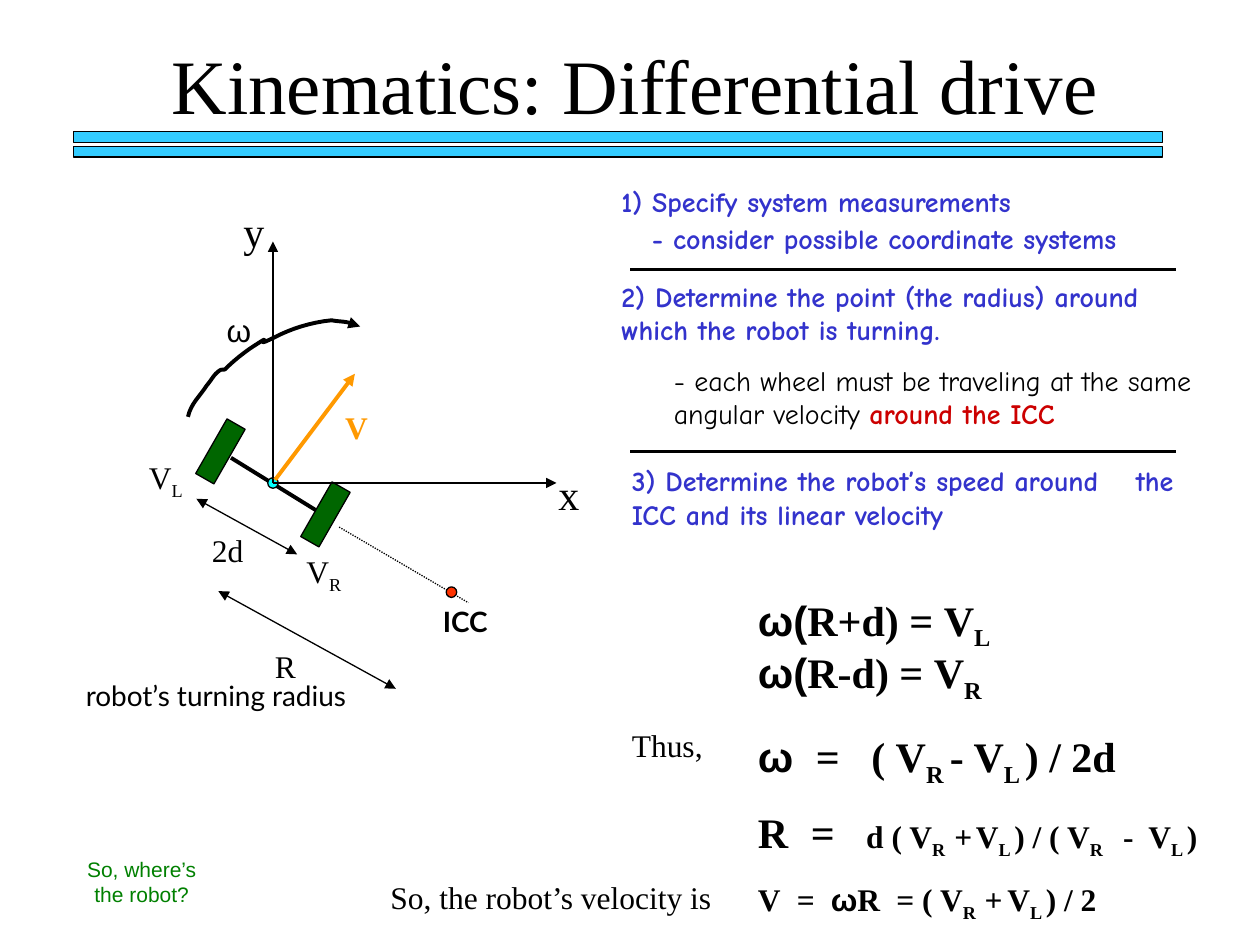
from dataclasses import dataclass, replace
from lxml.etree import SubElement as Sub
from pptx import Presentation
from pptx.dml.color import RGBColor as Rgb
from pptx.enum.dml import MSO_LINE as Dash
from pptx.enum.shapes import MSO_CONNECTOR as Link, MSO_SHAPE as Form
from pptx.enum.text import MSO_ANCHOR as Anchor, MSO_AUTO_SIZE as Fit, PP_ALIGN as Align
from pptx.oxml.ns import qn
from pptx.util import Inches, Pt


@dataclass(frozen=True)
class Style:
    """Look of a run of text."""
    size: int
    face: str
    hue: str = "000000"
    bold: bool = False


class Theme:
    """Colours and type sizes of the slide."""
    black, sky, green = "000000", "33CCFF", "006600"
    cyan, red, gold = "00FFFF", "FF3300", "FF9900"
    thin, rule, thick = 0.75, 1.5, 2.25
    title = Style(44, "Times New Roman")
    label = Style(18, "Times New Roman")
    axis = replace(label, size=24)
    speed = replace(label, hue=gold, bold=True)
    greek = Style(18, "Arial")
    name = Style(16, "Lato")
    note = Style(16, "Comic Neue")
    step = replace(note, hue="3333CC", bold=True)
    stress = replace(note, hue="CC0000", bold=True)
    ask = Style(12, "Arial", "008000")
    math = replace(axis, bold=True)
    small = replace(label, bold=True)
    omega = replace(greek, size=24, bold=True)
    tiny = replace(greek, bold=True)


def cell(count):
    """Turn grid cells, twelve to the inch, into a length."""
    return Inches(count / 12)


def write(para, runs):
    """Add styled runs; every second part between bars is a subscript."""
    for words, style in runs:
        for turn, part in enumerate(words.split("|")):
            if not part:
                continue
            run = para.add_run()
            run.text = part
            font = run.font
            font.size, font.name, font.bold = Pt(style.size), style.face, style.bold
            font.color.rgb = Rgb.from_string(style.hue)
            if turn % 2:
                run._r.get_or_add_rPr().set("baseline", "-25000")


def ink(line, hue, width, ends=()):
    """Set the colour, width and arrowheads of a line."""
    line.color.rgb = Rgb.from_string(hue)
    line.width = Pt(width)
    for end in ends:
        Sub(line._get_or_add_ln(), qn("a:" + end), type="triangle")


@dataclass
class Pane:
    """A box of the slide, in cells, that places parts from its corner."""
    slide: object
    left: float
    top: float
    wide: float

    def spot(self, x, y):
        """Give the slide position of a point in the pane."""
        return cell(self.left + x), cell(self.top + y)

    def text(self, x, y, wide, *runs, rows=1, tabs=(), align=None):
        """Place a text box sized by its type."""
        high = rows * runs[0][1].size * 0.2 + 1.2
        frame = self.slide.shapes.add_textbox(*self.spot(x, y), cell(wide), cell(high)).text_frame
        frame.word_wrap = True
        para = frame.paragraphs[0]
        para.alignment = align
        if tabs:
            stops = Sub(para._p.get_or_add_pPr(), qn("a:tabLst"))
            for stop in tabs:
                Sub(stops, qn("a:tab"), pos=str(Inches(stop)), algn="l")
        write(para, runs)

    def line(self, start, end, width=Theme.thin, hue=Theme.black, ends=(), dash=None):
        """Draw a straight line or arrow."""
        link = self.slide.shapes.add_connector(Link.STRAIGHT, *self.spot(*start), *self.spot(*end))
        Sub(link._element.spPr, qn("a:effectLst"))
        if dash:
            link.line.dash_style = dash
        ink(link.line, hue, width, ends)
        effect = link._element.spPr.find(qn("a:effectLst"))
        link._element.spPr.append(effect)

    def shape(self, form, x, y, wide, high, hue, turn=0):
        """Draw a filled preset shape."""
        item = self.slide.shapes.add_shape(form, *self.spot(x, y), cell(wide), cell(high))
        item.shadow.inherit = False
        item.fill.solid()
        item.fill.fore_color.rgb = Rgb.from_string(hue)
        item.rotation = turn
        ink(item.line, Theme.black, Theme.thin)

    def curve(self, start, arcs, ends):
        """Draw an open path through cubic arcs."""
        points, here = [], start
        for one, two, last in arcs:
            for step in range(1, 9):
                t = step / 8
                mix = ((1 - t) ** 3, 3 * t * (1 - t) ** 2, 3 * t * t * (1 - t), t ** 3)
                knots = (here, one, two, last)
                points.append(self.spot(*(sum(m * k[i] for m, k in zip(mix, knots)) for i in (0, 1))))
            here = last
        pen = self.slide.shapes.build_freeform(*self.spot(*start))
        pen.add_line_segments(points, close=False)
        path = pen.convert_to_shape()
        path.shadow.inherit = False
        path.fill.background()
        ink(path.line, Theme.black, Theme.thick, ends)


def head(pane):
    """Place the title above a double bar."""
    title = pane.slide.shapes.title
    title.left, title.top = pane.spot(4, 0)
    title.width, title.height = cell(99), cell(10)
    frame = title.text_frame
    frame.auto_size, frame.vertical_anchor = Fit.NONE, Anchor.TOP
    frame.paragraphs[0].alignment = Align.CENTER
    write(frame.paragraphs[0], [("Kinematics: Differential drive", Theme.title)])
    for y in (9.55, 10.95):
        pane.shape(Form.RECTANGLE, 0, y, pane.wide, 1, Theme.sky)


def robot(pane):
    """Draw the axes, wheels, measures and motion of the robot."""
    both, tip = ("headEnd", "tailEnd"), ("tailEnd",)
    for x, y in ((23, 29), (13, 23)):
        pane.shape(Form.RECTANGLE, x, y, 2, 6, Theme.green, 29.8)
    pane.line((15, 26.6), (23.1, 31.6), Theme.thick)
    pane.line((25.3, 33.2), (37.6, 40.4), dash=Dash.ROUND_DOT)
    pane.line((11.7, 30.5), (21.3, 35.8), ends=both)
    pane.line((13.8, 39.3), (30.7, 48.6), ends=both)
    for x, y, hue in ((35.5, 38.9, Theme.red), (18.5, 28.5, Theme.cyan)):
        pane.shape(Form.OVAL, x, y, 1, 1, hue)
    for end in ((19, 6), (46, 29)):
        pane.line((19, 29), end, ends=tip)
    pane.line((19.2, 28.7), (26.8, 18.6), Theme.thick, Theme.gold, tip)
    pane.curve((10.9, 22.7), [
        ((11.2, 21.4), (12, 20.8), (12.7, 19.7)),
        ((13, 19.4), (13.4, 18.6), (13.9, 18.3)),
        ((14, 18.2), (14.2, 18.2), (14.4, 18.2)),
        ((15.2, 17.4), (16.2, 16.6), (17.1, 16)),
        ((19.6, 14.4), (16.6, 16.4), (19, 15.2)),
        ((20.7, 14.3), (22.6, 13.7), (24.6, 13.5)),
        ((25, 13.6), (25.6, 13.6), (26.1, 13.7)),
        ((26.6, 13.8), (27, 14.1), (27.3, 14.1))], tip)
    for x, y, wide, words, style in (
            (21, 35, 9, "V|R", Theme.label), (6, 26, 9, "V|L", Theme.label),
            (12, 33, 6, "2d", Theme.label), (18, 44, 6, "R", Theme.label),
            (34, 40, 8, "ICC", replace(Theme.name, bold=True)),
            (0, 47, 35, "robot’s turning radius", Theme.name),
            (13.4, 12, 6, "ω", Theme.greek), (24.7, 21.3, 4.6, "V", Theme.speed),
            (45, 27, 9, "x", Theme.axis), (15, 2, 9, "y", Theme.axis)):
        pane.text(x, y, wide, (words, style))


def steps(pane):
    """List the three steps, parted by rules."""
    for x, y, wide, rows, words in (
            (0, 0, 55, 1, "1) Specify system measurements"),
            (2.9, 3.5, 55, 1, "- consider possible coordinate systems"),
            (0, 9, 61, 2, "2) Determine the point (the radius) around \twhich the robot is turning."),
            (1, 26.6, 59, 2, "3) Determine the robot’s speed around \tthe ICC and its linear velocity")):
        pane.text(x, y, wide, (words, Theme.step), rows=rows)
    pane.text(5, 17, 54.7, ("- each wheel must be traveling at the same angular velocity ", Theme.note),
              ("around the ICC", Theme.stress), rows=2)
    for y in (8.7, 26):
        pane.line((2, y), (54, y), Theme.rule)


def maths(pane):
    """Set the equations and the words that lead to them."""
    big, mid = Theme.math, Theme.small
    for y, words in ((0, "R+d) = V|L"), (5, "R-d) = V|R")):
        pane.text(64, y, 32, ("ω(", Theme.omega), (words, big))
    pane.text(64, 13, 45, ("ω", Theme.omega), ("\t=\t( V|R |- V|L |) / 2d", big), tabs=(0.46, 0.9))
    pane.text(64, 20.2, 47, ("R\t=\t", big), ("d ( V|R|\t+\tV|L |) / ( V|R|\t-\tV|L |)", mid),
              tabs=(0.42, 0.86, 1.56, 1.73, 2.9, 3.1))
    pane.text(64, 27.2, 47, ("V\t=\t", mid), ("ω", Theme.tiny), ("R\t= ( V|R|\t+\tV|L |) / 2", mid),
              tabs=(0.31, 0.58, 1.1, 1.8, 1.98))
    pane.text(52, 12.6, 11, ("Thus,", Theme.label))
    pane.text(29, 27, 38, ("So, the robot’s velocity is", Theme.label))
    pane.text(0, 25, 13, ("So, where’s the robot?", Theme.ask), rows=2, align=Align.CENTER)


def main():
    """Build the slide and save it."""
    deck = Presentation()
    deck.slide_width, deck.slide_height = Inches(10), Inches(7.5)
    slide = deck.slides.add_slide(deck.slide_layouts[5])
    head(Pane(slide, 7, 3, 103.7))
    robot(Pane(slide, 7, 17, 54))
    steps(Pane(slide, 58, 17, 61))
    maths(Pane(slide, 7, 56, 111))
    deck.save("out.pptx")


if __name__ == "__main__":
    main()
